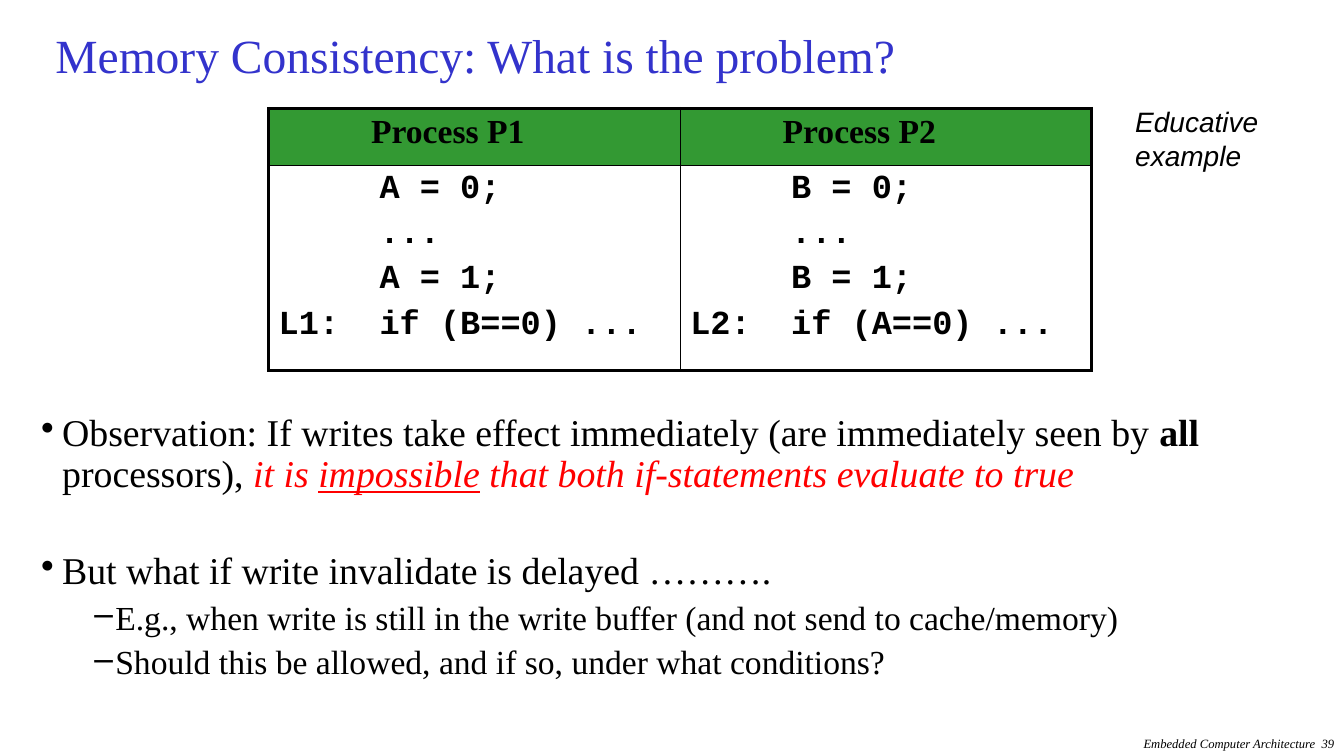
"""Build the slide on memory consistency with its two-process table."""
from lxml.etree import SubElement as Sub
from pptx import Presentation
from pptx.dml.color import RGBColor as RGB
from pptx.enum.text import MSO_ANCHOR as ANCHOR, PP_ALIGN as ALIGN
from pptx.oxml import parse_xml
from pptx.oxml.ns import nsdecls, qn
from pptx.util import Pt

ROMAN = "Times New Roman"


def put(para, text, size=27, face=ROMAN, color="000000", **style):
    run = para.add_run()
    run.text = text
    font = run.font
    font.size, font.name = Pt(size), face
    font.color.rgb = RGB.from_string(color)
    for name, value in style.items():
        setattr(font, name, value)


def indent(para, left, first):
    props = para._p.get_or_add_pPr()
    props.set("marL", str(Pt(left)))
    props.set("indent", str(Pt(first)))
    return props


deck = Presentation()
deck.slide_width, deck.slide_height = Pt(960), Pt(540)
slide = deck.slides.add_slide(deck.slide_layouts[5])
shapes = slide.shapes

title = shapes.title
title.left, title.top, title.width, title.height = Pt(32.4), Pt(9.4), Pt(895.7), Pt(66.2)
title.text_frame.vertical_anchor = ANCHOR.MIDDLE
head = title.text_frame.paragraphs[0]
head.alignment, head.line_spacing = ALIGN.LEFT, 0.8
put(head, "Memory Consistency: What is the problem?", size=34, color="3333CC")

body = shapes.add_textbox(Pt(22.3), Pt(292.3), Pt(928), Pt(147.6)).text_frame
body.word_wrap = True
points = [
    (0, 6, [("Observation: If writes take effect immediately (are immediately seen by ", {}),
            ("all", {"bold": True}),
            (" processors), ", {}),
            ("it is ", {"color": "FF0000", "italic": True}),
            ("impossible", {"color": "FF0000", "italic": True, "underline": True}),
            (" that both if-statements evaluate to true", {"color": "FF0000", "italic": True})]),
    (0, 40, [("But what if write invalidate is delayed ……….", {})]),
    (1, 6, [("E.g., when write is still in the write buffer (and not send to cache/memory)", {})]),
    (1, 6, [("Should this be allowed, and if so, under what conditions?", {})]),
]
for i, (level, gap, runs) in enumerate(points):
    para = body.add_paragraph() if i else body.paragraphs[0]
    para.level, para.line_spacing, para.space_before = level, 0.9, Pt(gap)
    Sub(indent(para, (15, 53)[level], -15), qn("a:buChar"), char="•–"[level])
    for text, style in runs:
        put(para, text, size=(27, 24)[level], **style)

table = shapes.add_table(2, 2, Pt(191.9), Pt(77.3), Pt(588), Pt(187.2)).table
table.rows[0].height, table.rows[1].height = Pt(41), Pt(146.2)
for col, (own, other) in enumerate(("AB", "BA")):
    top, low = table.cell(0, col), table.cell(1, col)
    top.fill.solid()
    top.fill.fore_color.rgb = RGB.from_string("339933")
    low.fill.background()
    para = top.text_frame.paragraphs[0]
    para.space_before = Pt(5)
    indent(para, 66, 0)
    put(para, f"Process P{col + 1}", size=24, bold=True)
    code = [f"{own} = 0;", "...", f"{own} = 1;", f"L{col + 1}:\tif ({other}==0) ..."]
    for i, line in enumerate(code):
        para = low.text_frame.add_paragraph() if i else low.text_frame.paragraphs[0]
        para.space_before = Pt(5)
        indent(para, 72, -72 if "\t" in line else 0)
        put(para, line, size=24, face="Courier New", bold=True)
    for row, cell in enumerate((top, low)):
        outer = {"L": col == 0, "R": col == 1, "T": row == 0, "B": row == 1}
        for i, (side, thick) in enumerate(outer.items()):
            edge = parse_xml(
                f'<a:ln{side} {nsdecls("a")} w="{Pt(2.25 if thick else 1)}"><a:solidFill>'
                f'<a:srgbClr val="000000"/></a:solidFill></a:ln{side}>')
            cell._tc.get_or_add_tcPr().insert(i, edge)

note = shapes.add_textbox(Pt(803.8), Pt(71.3), Pt(103), Pt(55.4)).text_frame
note.word_wrap = False
para = note.paragraphs[0]
put(para, "Educative", size=20, face="Arial", italic=True)
para.add_line_break()
put(para, "example", size=20, face="Arial", italic=True)

foot = shapes.add_textbox(Pt(684), Pt(522), Pt(276), Pt(18)).text_frame
foot.word_wrap = True
para = foot.paragraphs[0]
para.alignment = ALIGN.RIGHT
put(para, "Embedded Computer Architecture  39", size=9, italic=True)

deck.save("out.pptx")
